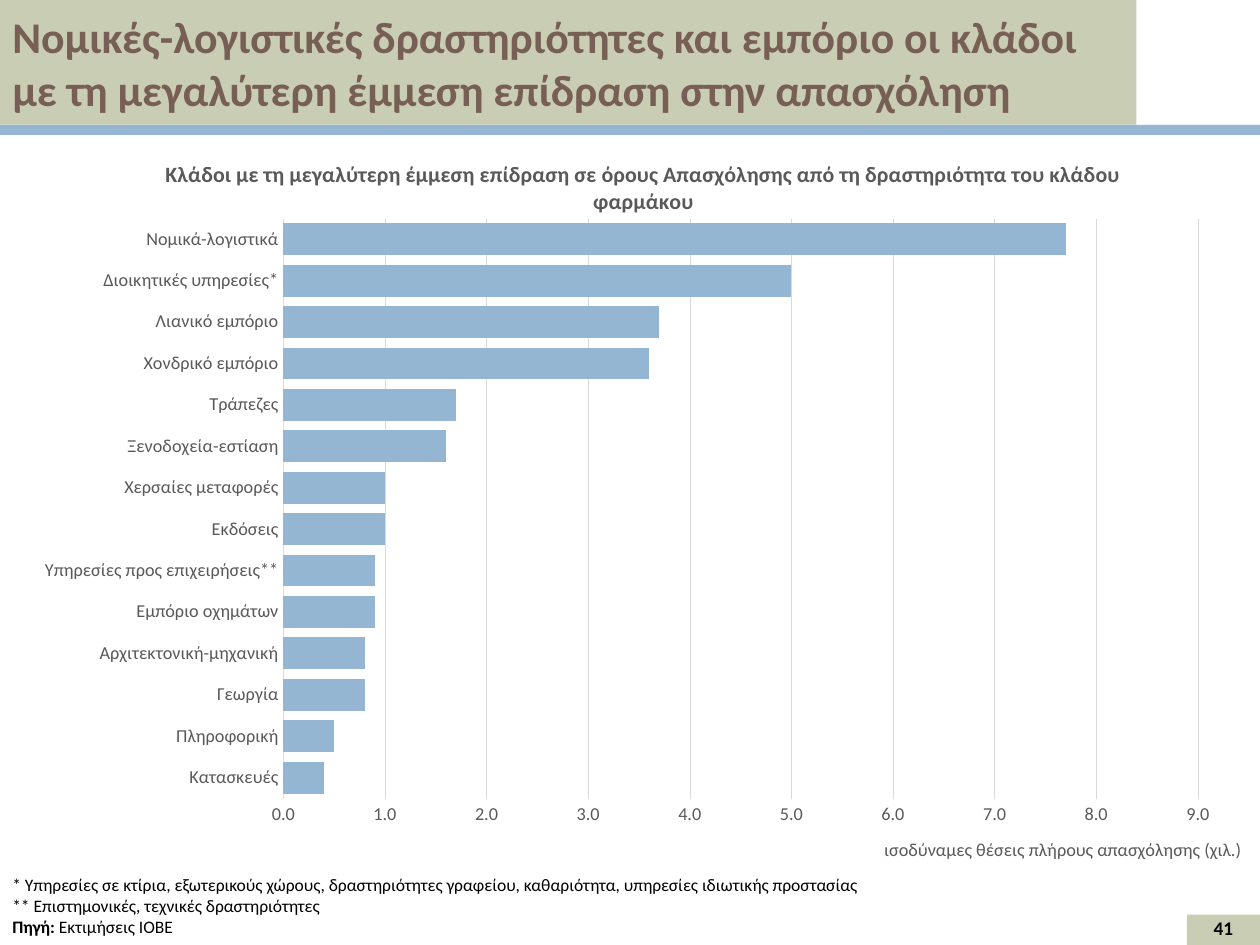
from dataclasses import dataclass

from lxml import etree
from pptx import Presentation, util as u
from pptx.chart import data as cd
from pptx.dml.color import RGBColor
from pptx.enum import chart as ch, dml, shapes, text as tx
from pptx.oxml import ns


@dataclass(frozen=True)
class Theme:
    """Colours, type sizes and face of the slide."""
    face: str = "Calibri"
    sage: str = "C9CDB3"
    blue: str = "94B6D2"
    brown: str = "775F55"
    black: str = "000000"
    gray: str = "595959"
    rule: str = "D9D9D9"
    head: float = 25
    title: float = 12.6
    label: float = 10.5
    page: float = 11
    note: float = 10


THEME = Theme()
ROWS = [
    ("Νομικά-λογιστικά", 7.7),
    ("Διοικητικές υπηρεσίες*", 5),
    ("Λιανικό εμπόριο", 3.7),
    ("Χονδρικό εμπόριο", 3.6),
    ("Τράπεζες", 1.7),
    ("Ξενοδοχεία-εστίαση", 1.6),
    ("Χερσαίες μεταφορές", 1),
    ("Εκδόσεις", 1),
    ("Υπηρεσίες προς επιχειρήσεις**", 0.9),
    ("Εμπόριο οχημάτων", 0.9),
    ("Αρχιτεκτονική-μηχανική", 0.8),
    ("Γεωργία", 0.8),
    ("Πληροφορική", 0.5),
    ("Κατασκευές", 0.4),
]
NOTES = [
    [("* Υπηρεσίες σε κτίρια, εξωτερικούς χώρους, δραστηριότητες γραφείου, "
      "καθαριότητα, υπηρεσίες ιδιωτικής προστασίας", False)],
    [("** Επιστημονικές, τεχνικές δραστηριότητες", False)],
    [("Πηγή:", True), (" Εκτιμήσεις ΙΟΒΕ", False)],
]


def apply(item, vals):
    """Set each attribute of an item from a dict."""
    for key, val in vals.items():
        setattr(item, key, val)


def style(font, size, color, bold=False):
    """Give a font its face, size, weight and colour."""
    apply(font, {"name": THEME.face, "size": u.Pt(size), "bold": bold})
    font.color.rgb = RGBColor.from_string(color)


def band(slide, box, color):
    """Draw a plain filled strip in the box."""
    shape = slide.shapes.add_shape(shapes.MSO_SHAPE.RECTANGLE, *map(u.Inches, box))
    shape.shadow.inherit = False
    shape.fill.solid()
    shape.fill.fore_color.rgb = RGBColor.from_string(color)
    shape.line.fill.background()
    return shape


def write(shape, paras, size, color, align=tx.PP_ALIGN.LEFT, anchor=tx.MSO_ANCHOR.MIDDLE):
    """Fill a shape with paragraphs made of text and weight pairs."""
    frame = shape.text_frame
    apply(frame, {"word_wrap": True, "vertical_anchor": anchor})
    for num, runs in enumerate(paras):
        para = frame.add_paragraph() if num else frame.paragraphs[0]
        para.alignment = align
        for words, bold in runs:
            run = para.add_run()
            run.text = words
            style(run.font, size, color, bold)


def header(slide, box):
    """Place the heading block and the rule below it."""
    left, top, width, height = box
    head = band(slide, (left, top, 9.02, height), THEME.sage)
    write(head, [[("Νομικές-λογιστικές δραστηριότητες και εμπόριο οι κλάδοι "
                   "με τη μεγαλύτερη έμμεση επίδραση στην απασχόληση", True)]],
          THEME.head, THEME.brown)
    band(slide, (left, top + height, width, 0.08), THEME.blue)


def place(parent, before, **spots):
    """Add a manual layout to a chart part after the named child."""
    old = parent.find(ns.qn("c:layout"))
    if old is not None:
        parent.remove(old)
    layout = etree.Element(ns.qn("c:layout"))
    manual = etree.SubElement(layout, ns.qn("c:manualLayout"))
    for key, val in spots.items():
        etree.SubElement(manual, ns.qn("c:" + key)).set("val", str(val))
    prior = parent.find(ns.qn(before)) if before else None
    if prior is None:
        parent.insert(0, layout)
    else:
        prior.addnext(layout)


def name(owner, title, words, size, bold, x, y):
    """Write a chart or axis title at a share of the chart."""
    owner.has_title = True
    frame = title().text_frame
    frame.text = words
    style(frame.paragraphs[0].runs[0].font, size, THEME.gray, bold)
    place(title()._element, "c:tx", xMode="edge", yMode="edge", x=x, y=y)


def bars(slide, box):
    """Draw the bar chart of sectors in the box."""
    data = cd.CategoryChartData(number_format="0.0")
    labels, vals = zip(*reversed(ROWS))
    data.categories = labels
    data.add_series("Απασχόληση", vals)
    chart = slide.shapes.add_chart(ch.XL_CHART_TYPE.BAR_CLUSTERED,
                                   *map(u.Inches, box), data).chart
    chart.has_legend = False
    style(chart.font, THEME.label, THEME.gray)
    name(chart, lambda: chart.chart_title,
         "Κλάδοι με τη μεγαλύτερη έμμεση επίδραση σε όρους Απασχόλησης "
         "από τη δραστηριότητα του κλάδου φαρμάκου", THEME.title, True, 0.12, 0)
    chart.chart_title.include_in_layout = False

    plot = chart.plots[0]
    apply(plot, {"gap_width": 30, "vary_by_categories": False})
    fill = plot.series[0].format.fill
    fill.solid()
    fill.fore_color.rgb = RGBColor.from_string(THEME.blue)

    cat, val = chart.category_axis, chart.value_axis
    for axis in (cat, val):
        apply(axis, {"major_tick_mark": ch.XL_TICK_MARK.NONE,
                     "minor_tick_mark": ch.XL_TICK_MARK.NONE})
        style(axis.tick_labels.font, THEME.label, THEME.gray)
    apply(val, {"minimum_scale": 0, "maximum_scale": 9, "major_unit": 1,
                "has_major_gridlines": True})
    apply(val.tick_labels, {"number_format": "0.0", "number_format_is_linked": False})
    val.format.line.fill.background()
    grid = val.major_gridlines.format.line
    for line, width in ((cat.format.line, 0.75), (grid, 0.25)):
        line.width = u.Pt(width)
        line.color.rgb = RGBColor.from_string(THEME.rule)
    grid.dash_style = dml.MSO_LINE.ROUND_DOT
    name(val, lambda: val.axis_title, "ισοδύναμες θέσεις πλήρους απασχόλησης (χιλ.)",
         THEME.label, False, 0.71, 0.96)
    area = plot._element.getparent()
    place(area, None, layoutTarget="inner", xMode="edge", yMode="edge",
          x=0.22, y=0.09, w=0.75, h=0.82)


def footer(slide, box):
    """Place the notes at left and the page number at right."""
    left, top, width, height = box
    notes = slide.shapes.add_textbox(*map(u.Inches, (left, top, 9.4, height)))
    write(notes, NOTES, THEME.note, THEME.black, anchor=tx.MSO_ANCHOR.TOP)
    tab = band(slide, (left + width - 0.58, top + height - 0.24, 0.58, 0.24), THEME.sage)
    apply(tab.text_frame, {"margin_top": 0, "margin_bottom": u.Inches(0.03)})
    write(tab, [[("41", True)]], THEME.page, THEME.black, tx.PP_ALIGN.CENTER)


def main():
    """Build and save the slide."""
    deck = Presentation()
    apply(deck, {"slide_width": u.Inches(10), "slide_height": u.Inches(7.5)})
    slide = deck.slides.add_slide(deck.slide_layouts[6])
    header(slide, (0, 0, 10, 0.99))
    bars(slide, (0.12, 1.23, 9.76, 5.65))
    footer(slide, (0, 6.89, 10, 0.61))
    deck.save("out.pptx")


if __name__ == "__main__":
    main()
